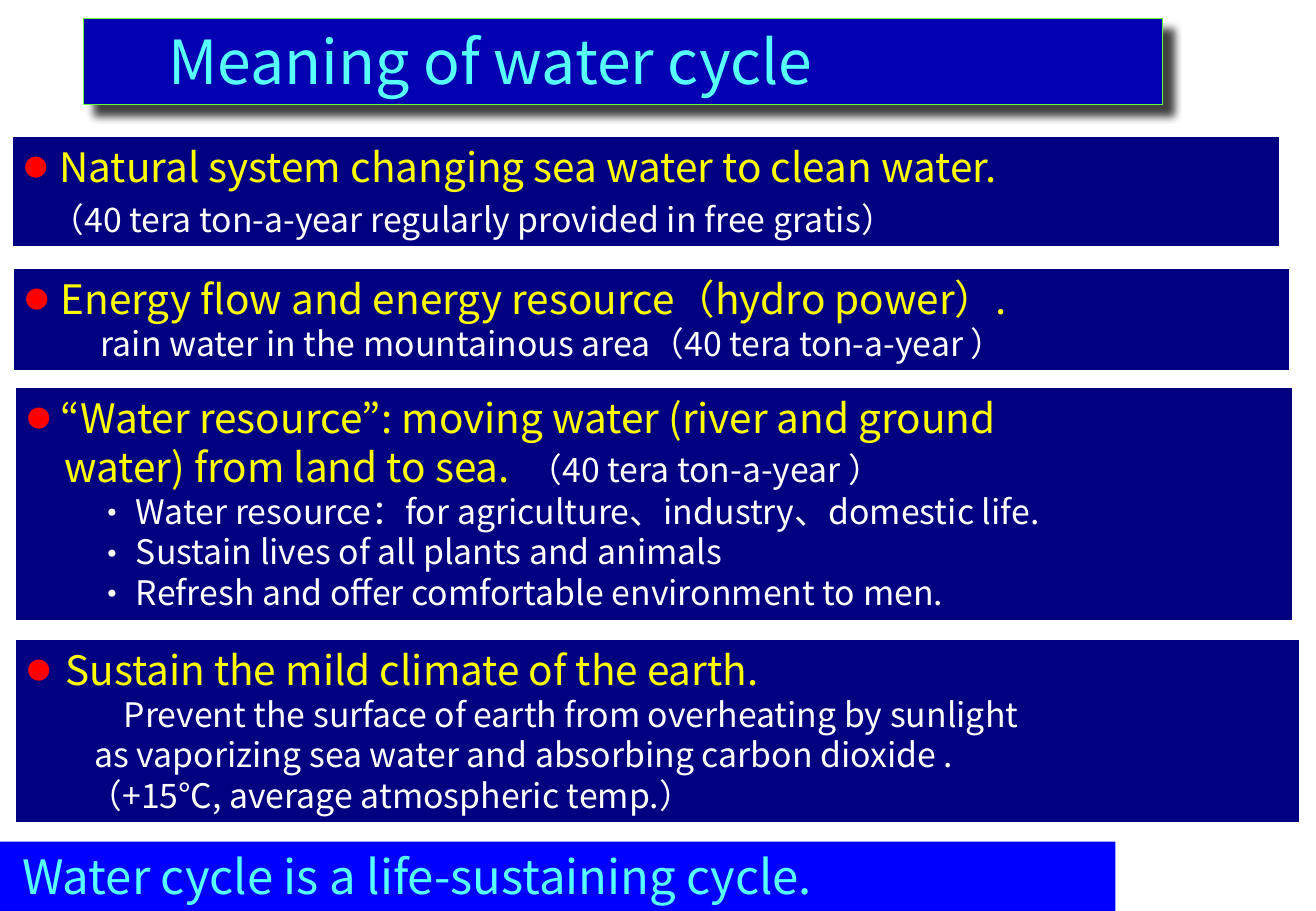
from lxml import etree
from pptx import Presentation, util as u
from pptx.dml.color import RGBColor
from pptx.enum import shapes, text
from pptx.oxml import ns

W, H = u.Inches(10.83), u.Inches(7.5)
FONT = "Noto Sans CJK JP"
NAVY, WHITE, YELLOW, RED, CYAN = "000080", "FFFFFF", "FFFF00", "FF0000", "58FFFF"

PANELS = [
    ((0.92, 14.93, 96.31, 12.13), [
        ("head", 2.68, "Natural system changing sea water to clean water."),
        ("late", 2.03, "（40 tera ton-a-year regularly provided in free gratis）")]),
    ((1.02, 29.47, 96.95, 11.2), [
        ("head", 2.68, "Energy flow and energy resource（hydro power）."),
        ("note", 5.72, "rain water in the mountainous area（40 tera ton-a-year ）")]),
    ((1.2, 42.53, 97.05, 25.6), [
        ("head", 2.49, "“Water resource”: moving water (river and ground"),
        ("more", 2.77, "water) from land to sea.", "（40 tera ton-a-year ）"),
        ("item", 8.22, "Water resource：for agriculture、industry、domestic life."),
        ("item", 8.22, "Sustain lives of all plants and animals"),
        ("item", 8.22, "Refresh and offer comfortable environment to men.")]),
    ((1.2, 70.13, 97.6, 20.13), [
        ("head", 2.86, "Sustain the mild climate of the earth."),
        ("note", 7.29, "Prevent the surface of earth from overheating by sunlight"),
        ("note", 5.08, "as vaporizing sea water and absorbing carbon dioxide ."),
        ("note", 4.62, "（+15℃, average atmospheric temp.）")]),
]


def rgb(value):
    """Turn a hex string into a colour."""
    return RGBColor.from_string(value)


def across(share):
    """Return a percentage of the slide width."""
    return int(W * share / 100)


def down(share):
    """Return a percentage of the slide height."""
    return int(H * share / 100)


def add_node(parent, tag, **attrs):
    """Append a drawing element with its attributes."""
    return etree.SubElement(parent, ns.qn(tag), {k: str(v) for k, v in attrs.items()})


def add_box(s, place, fill, line=None):
    """Add a filled rectangle placed by shares and return it."""
    left, top, width, height = place
    sp = s.shapes.add_shape(shapes.MSO_SHAPE.RECTANGLE, across(left), down(top),
                            across(width), down(height))
    sp.shadow.inherit = False
    sp.fill.solid()
    sp.fill.fore_color.rgb = rgb(fill)
    if line:
        sp.line.color.rgb = rgb(line)
        sp.line.width = u.Pt(0.75)
    else:
        sp.line.fill.background()
    tf = sp.text_frame
    tf.word_wrap = True
    tf.vertical_anchor = text.MSO_ANCHOR.TOP
    return sp


def add_shadow(sp):
    """Give a box a soft shadow to the lower right."""
    effects = sp._element.spPr.find(ns.qn("a:effectLst"))
    shadow = add_node(effects, "a:outerShdw", blurRad=u.Pt(5), dist=u.Pt(8.5),
                      dir=45 * 60000, algn="tl", rotWithShape=0)
    add_node(add_node(shadow, "a:srgbClr", val="000000"), "a:alpha", val=75000)


def add_bullet(p, char, color, percent):
    """Give a paragraph a coloured bullet character."""
    pPr = p._p.get_or_add_pPr()
    add_node(add_node(pPr, "a:buClr"), "a:srgbClr", val=color)
    add_node(pPr, "a:buSzPct", val=percent * 1000)
    add_node(pPr, "a:buFont", typeface=FONT)
    add_node(pPr, "a:buChar", char=char)


def style_paragraph(p, margin, size, color, hang=0):
    """Set indent, alignment and font of a paragraph."""
    p.alignment = text.PP_ALIGN.LEFT
    pPr = p._p.get_or_add_pPr()
    pPr.set("marL", str(across(margin)))
    pPr.set("indent", str(-across(hang)))
    p.font.name = FONT
    p.font.size = u.Pt(size)
    p.font.color.rgb = rgb(color)
    add_node(pPr.find(ns.qn("a:defRPr")), "a:ea", typeface=FONT)


def add_run(p, words, size=None, color=None):
    """Add a run, with its own size and colour where given."""
    r = p.add_run()
    r.text = words
    if size:
        r.font.size = u.Pt(size)
    if color:
        r.font.color.rgb = rgb(color)


def add_line(p, kind, margin, words, aside=None):
    """Write one panel line in the style of its kind."""
    heading = kind in ("head", "more")
    hang = {"head": margin, "item": 3.05}.get(kind, 0)
    if kind == "head":
        add_bullet(p, "●", RED, 58)
    elif kind == "item":
        add_bullet(p, "・", WHITE, 100)
    elif kind == "late":
        p.space_before = u.Pt(5)
    style_paragraph(p, margin, 24 if heading else 20, YELLOW if heading else WHITE, hang)
    add_run(p, words)
    if aside:
        add_run(p, "　", 11)
        add_run(p, aside, 20, WHITE)


def add_panel(s, place, lines):
    """Add a navy panel with its lines."""
    tf = add_box(s, place, NAVY, WHITE).text_frame
    for i, line in enumerate(lines):
        add_line(tf.add_paragraph() if i else tf.paragraphs[0], *line)


def add_banner(s, place, fill, words, size, margin, line=None):
    """Add a one-line banner and return its box."""
    sp = add_box(s, place, fill, line)
    p = sp.text_frame.paragraphs[0]
    style_paragraph(p, margin, size, CYAN)
    add_run(p, words)
    return sp


def main():
    """Build the slide and save it."""
    prs = Presentation()
    prs.slide_width, prs.slide_height = W, H
    s = prs.slides.add_slide(prs.slide_layouts[6])
    add_shadow(add_banner(s, (6.37, 2, 81.99, 9.47), "0000B2",
                          "Meaning of water cycle", 36, 5.54, "66FF33"))
    for place, lines in PANELS:
        add_panel(s, place, lines)
    add_banner(s, (0, 92.4, 84.76, 7.6), "0000FF",
               "Water cycle is a life-sustaining cycle.", 28, 0.8)
    prs.save("out.pptx")


if __name__ == "__main__":
    main()
